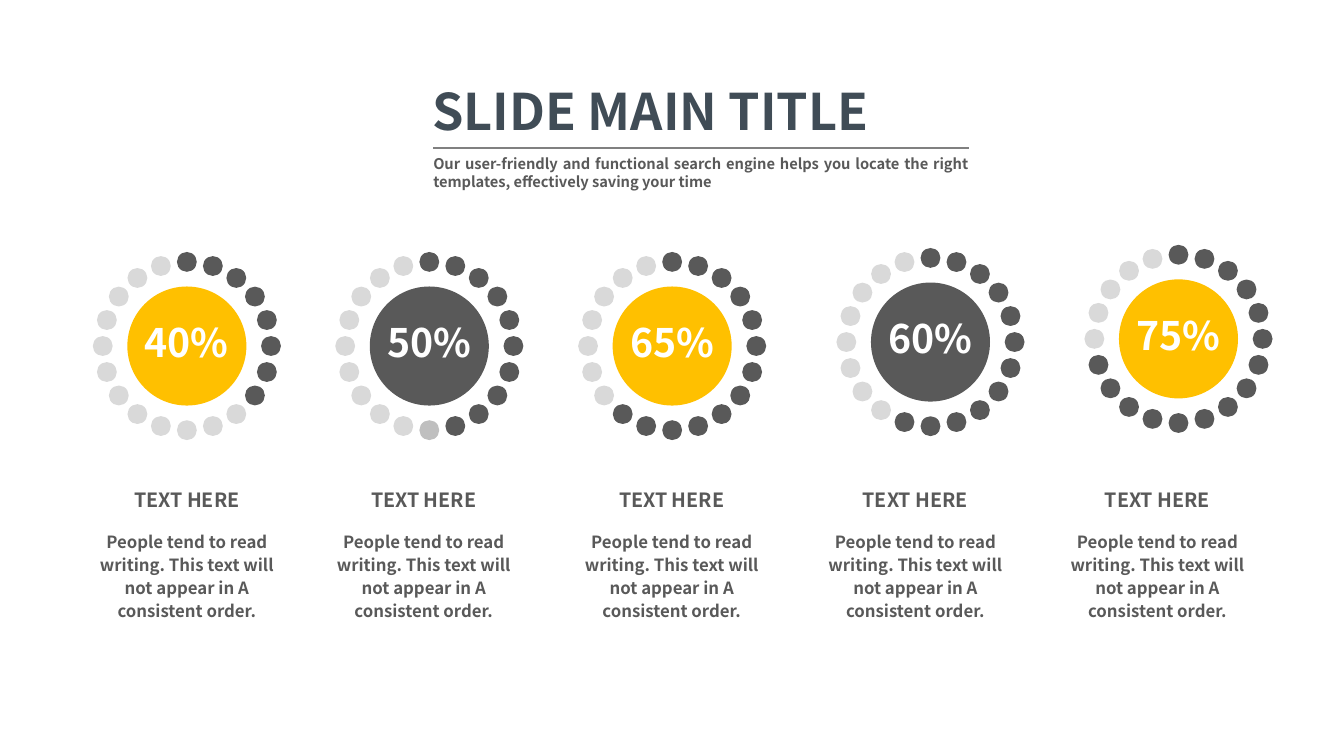
import math

from lxml import etree
from pptx import Presentation
from pptx.dml.color import RGBColor
from pptx.enum import shapes, text
from pptx.oxml.ns import qn
from pptx.util import Cm, Pt

FONT = "Noto Sans CJK SC"
YELLOW, DARK, MID, LIGHT = "FFC000", "595959", "BFBFBF", "D9D9D9"
SLATE, RULE, WHITE = "404C56", "808080", "FFFFFF"
DOTS, DOT, CORE, RING = 20, 0.5, 3.0, 4.74
CAPTION_W = 5.0
BODY = ("People tend to read writing. This text will not appear in A "
        "consistent order.")

# percent, core colour, ring left, ring top, caption left (cm)
DIALS = [
    (40, YELLOW, 2.34, 6.35, 2.21),
    (50, DARK, 8.45, 6.35, 8.18),
    (65, YELLOW, 14.57, 6.35, 14.43),
    (60, DARK, 21.08, 6.25, 20.57),
    (75, YELLOW, 27.33, 6.17, 26.67),
]


def rgb(value):
    return RGBColor.from_string(value)


def write(sp, content, size, color, align, wrap=True, spacing=None):
    tf = sp.text_frame
    frame = {"word_wrap": wrap, "auto_size": text.MSO_AUTO_SIZE.NONE,
             "vertical_anchor": text.MSO_ANCHOR.TOP,
             "margin_left": Cm(0.25), "margin_right": Cm(0.25),
             "margin_top": Cm(0.13), "margin_bottom": Cm(0.13)}
    for key, value in frame.items():
        setattr(tf, key, value)
    p = tf.paragraphs[0]
    p.alignment = align
    if spacing:
        p.line_spacing = spacing
    r = p.add_run()
    r.text = content
    for key, value in {"name": FONT, "size": Pt(size), "bold": True}.items():
        setattr(r.font, key, value)
    r.font.color.rgb = rgb(color)


def add_text(s, x, y, w, h, *args, **kwargs):
    sp = s.shapes.add_textbox(Cm(x), Cm(y), Cm(w), Cm(h))
    write(sp, *args, **kwargs)


def add_disc(s, cx, cy, size, color):
    """Draw a filled circle centred on (cx, cy)."""
    sp = s.shapes.add_shape(shapes.MSO_SHAPE.OVAL, Cm(cx - size / 2),
                            Cm(cy - size / 2), Cm(size), Cm(size))
    sp.shadow.inherit = False
    sp.fill.solid()
    sp.fill.fore_color.rgb = rgb(color)
    sp.line.fill.background()


def add_rule(s, x, y, w, color):
    line = s.shapes.add_connector(shapes.MSO_CONNECTOR.STRAIGHT,
                                  Cm(x), Cm(y), Cm(x + w), Cm(y))
    line.line.color.rgb = rgb(color)
    line.line.width = Pt(1)
    etree.SubElement(line._element.spPr, qn("a:effectLst"))


def add_heading(s, x, y, w):
    title = s.shapes.title
    box = {"left": x, "top": y, "width": w, "height": 1.8}
    for key, value in box.items():
        setattr(title, key, Cm(value))
    justify = text.PP_ALIGN.JUSTIFY
    write(title, "SLIDE MAIN TITLE", 36, SLATE, justify)
    add_text(s, x + 0.03, y + 1.9, w - 0.05, 1.2,
             "Our user-friendly and functional search engine helps you locate "
             "the right templates, effectively saving your time",
             10.5, DARK, justify)
    for dy, color in ((1.85, RULE), (1.88, WHITE)):
        add_rule(s, x + 0.28, y + dy, w - 0.56, color)


def add_dial(s, x, y, percent, color):
    """Draw a ring of dots, filled clockwise from the top, around a core."""
    cx, cy = x + RING / 2, y + RING / 2
    add_disc(s, cx, cy, CORE, color)
    radius = (RING - DOT) / 2
    filled = round(percent * DOTS / 100)
    for i in range(DOTS):
        angle = 2 * math.pi * i / DOTS
        if i < filled:
            shade = DARK
        else:
            shade = MID if i == DOTS / 2 and percent == 50 else LIGHT
        add_disc(s, cx + radius * math.sin(angle),
                 cy - radius * math.cos(angle), DOT, shade)
    add_text(s, cx - 1.34, cy - 0.82, 2.67, 1.45, f"{percent}%",
             28, WHITE, text.PP_ALIGN.CENTER, wrap=False)


def add_caption(s, x, y):
    center = text.PP_ALIGN.CENTER
    add_text(s, x + 0.87, y, CAPTION_W - 1.74, 0.86, "TEXT HERE",
             14, DARK, center, wrap=False)
    add_text(s, x, y + 1.02, CAPTION_W, 2.6, BODY,
             12, DARK, center, spacing=1.14)


def main():
    prs = Presentation()
    prs.slide_width, prs.slide_height = Cm(33.87), Cm(19.05)
    s = prs.slides.add_slide(prs.slide_layouts[5])
    add_heading(s, 10.64, 1.88, 14.05)
    for percent, color, x, y, caption_x in DIALS:
        add_dial(s, x, y, percent, color)
        add_caption(s, caption_x, 12.17)
    prs.save("out.pptx")


if __name__ == "__main__":
    main()
